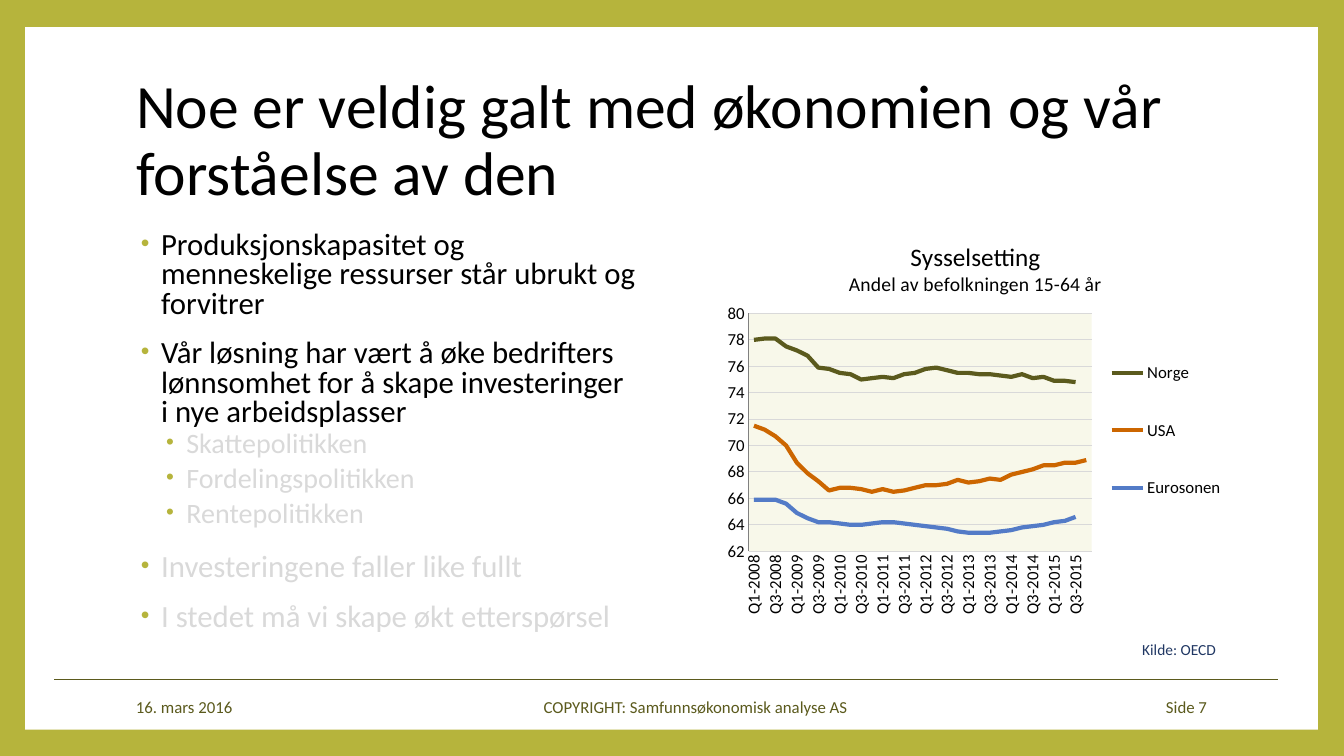
from lxml import etree
from pptx import Presentation
from pptx.chart.data import CategoryChartData
from pptx.dml.color import RGBColor
from pptx.enum.chart import XL_CHART_TYPE as ChartType, XL_LEGEND_POSITION as LegendPosition
from pptx.enum.chart import XL_TICK_MARK as TickMark
from pptx.enum.shapes import MSO_CONNECTOR as Connector, MSO_SHAPE as Shape
from pptx.enum.text import MSO_ANCHOR as Anchor, PP_ALIGN as Align
from pptx.oxml import parse_xml
from pptx.oxml.ns import nsdecls, qn
from pptx.util import Pt

# Content
OLIVE, DARK_OLIVE, BLACK, WHITE, GREY = "B6B43C", "5B5A1D", "000000", "FFFFFF", "D9D9D9"
FONT = "Calibri"
TITLE = "Noe er veldig galt med økonomien og vår forståelse av den"
BULLETS = [  # text, level, colour
    ("Produksjonskapasitet og menneskelige ressurser står ubrukt og forvitrer", 0, BLACK),
    ("Vår løsning har vært å øke bedrifters lønnsomhet for å skape investeringer "
     "i nye arbeidsplasser", 0, BLACK),
    ("Skattepolitikken", 1, GREY),
    ("Fordelingspolitikken", 1, GREY),
    ("Rentepolitikken", 1, GREY),
    ("Investeringene faller like fullt", 0, GREY),
    ("I stedet må vi skape økt etterspørsel", 0, GREY),
]
LEVELS = [  # size, left margin in px, spacing
    (22, 25, {"space_before": Pt(14), "space_after": Pt(0)}),
    (20, 50, {"space_before": Pt(2), "space_after": Pt(4)}),
]
HANGING = 20
SMALL_TEXTS = [  # text, box, size, colour, anchor, paragraph format
    ("16. mars 2016", (125, 681, 255, 40), 12, DARK_OLIVE, Anchor.MIDDLE,
     {"alignment": Align.LEFT}),
    ("COPYRIGHT: Samfunnsøkonomisk analyse AS", (432, 681, 516, 40), 12, DARK_OLIVE,
     Anchor.MIDDLE, {"alignment": Align.CENTER}),
    ("Side 7", (1020, 681, 187, 40), 12, DARK_OLIVE, Anchor.MIDDLE,
     {"alignment": Align.RIGHT}),
    ("Kilde: OECD", (825, 628, 391, 30), 11, "203763", Anchor.TOP,
     {"alignment": Align.RIGHT, "line_spacing": 1.1, "space_after": Pt(9)}),
]
CHART_TITLE = [("Sysselsetting", 18), ("Andel av befolkningen 15-64 år", 14)]
QUARTERS = [f"Q{quarter}-{year}" for year in range(2008, 2016) for quarter in range(1, 5)]
EMPLOYMENT = [  # name, colour, values
    ("Norge", DARK_OLIVE, [
        78, 78.1, 78.1, 77.5, 77.2, 76.8, 75.9, 75.8, 75.5, 75.4, 75, 75.1, 75.2, 75.1, 75.4, 75.5,
        75.8, 75.9, 75.7, 75.5, 75.5, 75.4, 75.4, 75.3, 75.2, 75.4, 75.1, 75.2, 74.9, 74.9, 74.8,
        None]),
    ("USA", "CC6600", [
        71.5, 71.2, 70.7, 70, 68.7, 67.9, 67.3, 66.6, 66.8, 66.8, 66.7, 66.5, 66.7, 66.5, 66.6,
        66.8, 67, 67, 67.1, 67.4, 67.2, 67.3, 67.5, 67.4, 67.8, 68, 68.2, 68.5, 68.5, 68.7, 68.7,
        68.9]),
    ("Eurosonen", "537BC7", [
        65.9, 65.9, 65.9, 65.6, 64.9, 64.5, 64.2, 64.2, 64.1, 64, 64, 64.1, 64.2, 64.2, 64.1, 64,
        63.9, 63.8, 63.7, 63.5, 63.4, 63.4, 63.4, 63.5, 63.6, 63.8, 63.9, 64, 64.2, 64.3, 64.6,
        None]),
]

EMU_PER_PX = 9144  # 100 px to the inch


def px(*lengths):
    return [length * EMU_PER_PX for length in lengths]


def color(value):
    return RGBColor.from_string(value)


def set_attributes(target, values):
    for name, value in values.items():
        setattr(target, name, value)


def set_font(font, size, value):
    set_attributes(font, {"name": FONT, "size": Pt(size), "bold": False})
    font.color.rgb = color(value)


def set_line(line, value, width):
    line.color.rgb = color(value)
    line.width = Pt(width)


def add_bullet(paragraph, left):
    properties = paragraph._p.get_or_add_pPr()
    margin, indent = px(left, -HANGING)
    properties.set("marL", str(margin))
    properties.set("indent", str(indent))
    bullet_color = etree.SubElement(properties, qn("a:buClr"))
    etree.SubElement(bullet_color, qn("a:srgbClr"), val=OLIVE)
    etree.SubElement(properties, qn("a:buSzPct"), val="80000")
    etree.SubElement(properties, qn("a:buFont"), typeface="Arial")
    etree.SubElement(properties, qn("a:buChar"), char="•")


def place(element, index, box):
    """Give a chart part a fixed place, in fractions of the chart."""
    for old in element.findall(qn("c:layout")):
        element.remove(old)
    layout = etree.Element(qn("c:layout"))
    manual = etree.SubElement(layout, qn("c:manualLayout"))
    if element.tag == qn("c:plotArea"):
        etree.SubElement(manual, qn("c:layoutTarget"), val="inner")
    for name in ("xMode", "yMode"):
        etree.SubElement(manual, qn(f"c:{name}"), val="edge")
    for name, value in zip("xywh", box):
        etree.SubElement(manual, qn(f"c:{name}"), val=str(value))
    element.insert(index, layout)


def chart_fill(value):
    return parse_xml(f'<c:spPr {nsdecls("c", "a")}><a:solidFill><a:srgbClr val="{value}"/>'
                     '</a:solidFill><a:ln><a:noFill/></a:ln></c:spPr>')


presentation = Presentation()
presentation.slide_width, presentation.slide_height = px(1333, 750)
slide = presentation.slides.add_slide(presentation.slide_layouts[5])

# Frame and footer line
slide.background.fill.solid()
slide.background.fill.fore_color.rgb = color(OLIVE)
panel = slide.shapes.add_shape(Shape.RECTANGLE, *px(25, 27, 1282, 697))
panel.shadow.inherit = False
panel.fill.solid()
panel.fill.fore_color.rgb = color(WHITE)
panel.line.fill.background()
divider = slide.shapes.add_connector(Connector.STRAIGHT, *px(54, 674, 1268, 674))
set_line(divider.line, DARK_OLIVE, 0.5)
etree.SubElement(divider._element.spPr, qn("a:effectLst"))

# Title
title = slide.shapes.title
set_attributes(title, dict(zip(("left", "top", "width", "height"), px(125, 67, 1095, 148))))
title.text_frame.text = TITLE
title.text_frame.vertical_anchor = Anchor.MIDDLE
paragraph = title.text_frame.paragraphs[0]
set_attributes(paragraph, {"alignment": Align.LEFT, "line_spacing": 0.9})
set_font(paragraph.font, 44, BLACK)
slide.shapes._spTree.append(title._element)  # bring in front of the panel

# Bullets
body = slide.shapes.add_textbox(*px(125, 225, 516, 442)).text_frame
body.word_wrap = True
for number, (text, level, text_color) in enumerate(BULLETS):
    paragraph = body.add_paragraph() if number else body.paragraphs[0]
    size, left, spacing = LEVELS[level]
    add_bullet(paragraph, left)
    set_attributes(paragraph, {"text": text, "level": level, "line_spacing": 0.8, **spacing})
    if number == 0:
        paragraph.space_before = Pt(0)
    set_font(paragraph.font, size, text_color)

# Footer and source
for text, box, size, text_color, anchor, formats in SMALL_TEXTS:
    frame = slide.shapes.add_textbox(*px(*box)).text_frame
    set_attributes(frame, {"word_wrap": True, "vertical_anchor": anchor})
    paragraph = frame.paragraphs[0]
    set_attributes(paragraph, {"text": text, **formats})
    set_font(paragraph.font, size, text_color)

# Employment chart
data = CategoryChartData(number_format="#,##0")
data.categories = QUARTERS
for name, _, values in EMPLOYMENT:
    data.add_series(name, values)
chart = slide.shapes.add_chart(ChartType.LINE, *px(712, 215, 508, 400), data).chart
set_font(chart.font, 12, BLACK)
for series, (_, line_color, _) in zip(chart.plots[0].series, EMPLOYMENT):
    series.smooth = False
    set_line(series.format.line, line_color, 3)
chart.plots[0].vary_by_categories = False

title_frame = chart.chart_title.text_frame
for number, (text, size) in enumerate(CHART_TITLE):
    paragraph = title_frame.add_paragraph() if number else title_frame.paragraphs[0]
    paragraph.text = text
    set_font(paragraph.font, size, BLACK)

chart.has_legend = True
set_attributes(chart.legend, {"position": LegendPosition.RIGHT, "include_in_layout": False})

quarter_axis, value_axis = chart.category_axis, chart.value_axis
for axis, line_color in ((quarter_axis, GREY), (value_axis, "808080")):
    set_attributes(axis, {"major_tick_mark": TickMark.NONE, "minor_tick_mark": TickMark.NONE})
    set_line(axis.format.line, line_color, 0.75)
set_attributes(value_axis, {"minimum_scale": 62, "maximum_scale": 80, "major_unit": 2})
set_line(value_axis.major_gridlines.format.line, GREY, 0.75)
set_font(quarter_axis.tick_labels.font, 12, BLACK)
quarter_axis._element.find(qn("c:txPr")).find(qn("a:bodyPr")).set("rot", "-5400000")
label_skip = etree.Element(qn("c:tickLblSkip"), val="2")
quarter_axis._element.find(qn("c:noMultiLvlLbl")).addprevious(label_skip)

# Chart layout and fills
chart_part = chart._chartSpace.find(qn("c:chart"))
plot_area = chart_part.find(qn("c:plotArea"))
place(plot_area, 0, (0.06, 0.24, 0.67, 0.59))
place(chart_part.find(qn("c:title")), 1, (0.25, 0.05))
place(chart_part.find(qn("c:legend")), 1, (0.76, 0.27, 0.23, 0.52))
plot_area.append(chart_fill("F8F8EA"))
chart_part.addnext(chart_fill(WHITE))

presentation.save("out.pptx")
